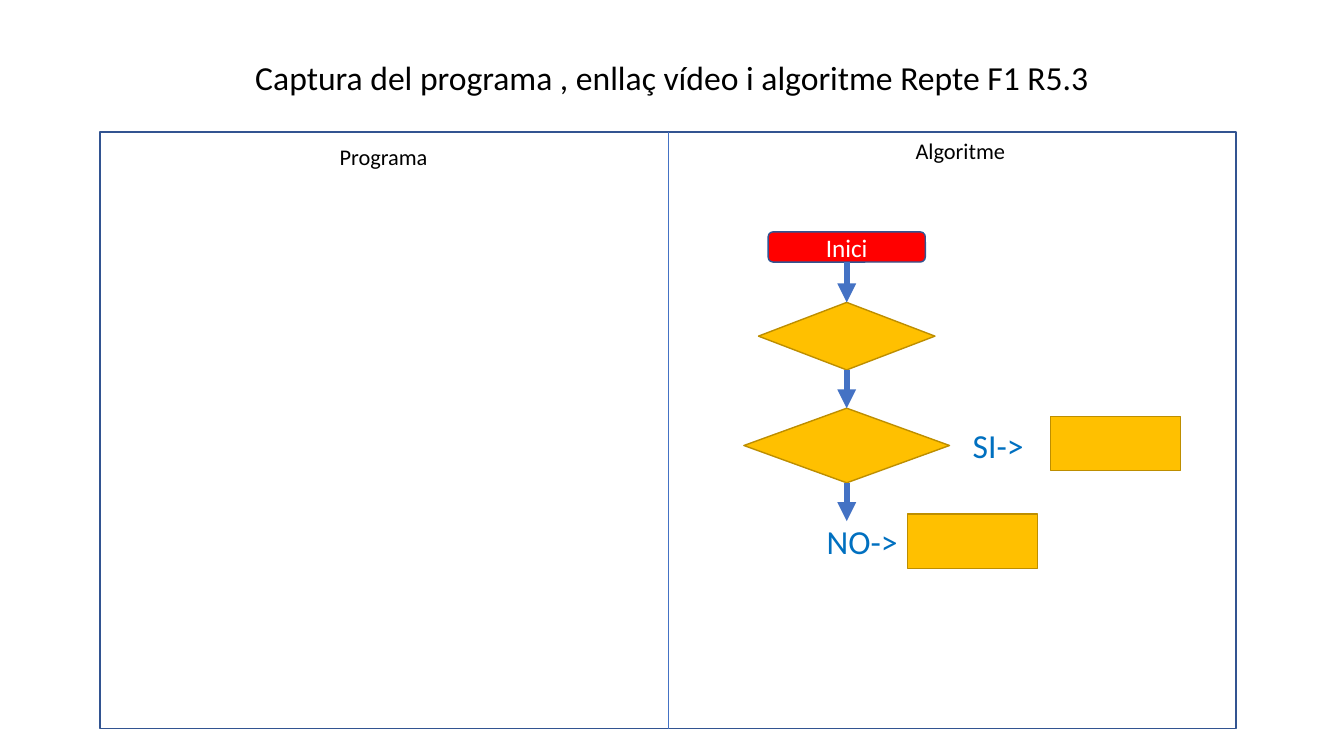
"""Builds the slide with a program panel and an algorithm flowchart."""
from lxml import etree
from pptx import Presentation, util as u
from pptx.dml.color import RGBColor
from pptx.enum import shapes, text
from pptx.oxml.ns import qn

THEME = {
    "font": "Calibri", "title": 24, "heading": 16, "start": 18, "branch": 24,
    "black": "000000", "white": "FFFFFF", "red": "FF0000", "navy": "325491",
    "amber": "FFC000", "ochre": "BD8E00", "blue": "4472C4", "azure": "0070C0",
}
FORM = shapes.MSO_SHAPE

presentation = Presentation()
presentation.slide_width = u.Inches(13.33)
presentation.slide_height = u.Inches(7.5)
slide = presentation.slides.add_slide(presentation.slide_layouts[6])
column = presentation.slide_width / 100
row = presentation.slide_height / 100


def add_box(form, left, top, width, height, fill, line):
    """Adds a filled preset shape, or a text box when form is None."""
    area = [round(length) for length in (left * column, top * row, width * column, height * row)]
    if form is None:
        return slide.shapes.add_textbox(*area)
    shape = slide.shapes.add_shape(form, *area)
    shape.shadow.inherit = False
    shape.fill.solid()
    shape.fill.fore_color.rgb = RGBColor.from_string(THEME[fill])
    shape.line.color.rgb = RGBColor.from_string(THEME[line])
    shape.line.width = u.Pt(1)
    return shape


def write(shape, wording, size, color, centered=True):
    """Writes one paragraph into a shape and returns it."""
    shape.text_frame.word_wrap = True
    paragraph = shape.text_frame.paragraphs[0]
    paragraph.text = wording
    paragraph.alignment = text.PP_ALIGN.CENTER if centered else text.PP_ALIGN.LEFT
    paragraph.font.name = THEME["font"]
    paragraph.font.size = u.Pt(THEME[size])
    paragraph.font.color.rgb = RGBColor.from_string(THEME[color])
    return paragraph


frame = add_box(FORM.RECTANGLE, 7.43, 17.47, 84.55, 78.93, "white", "navy")

for wording, size, left, top, width in (
    ("Programa", "heading", 7.43, 18.67, 42.23),
    ("Algoritme", "heading", 50.34, 17.87, 42.23),
    ("Captura del programa , enllaç vídeo i algoritme Repte F1 R5.3", "title", 0, 7.47, 100),
):
    heading = write(add_box(None, left, top, width, 24.13, None, None), wording, size, "black")
    heading.line_spacing = 0.9
    heading.space_before = u.Pt(10)

axis = 63
steps = []
for form, top, width, height, fill, line in (
    (FORM.ROUNDED_RECTANGLE, 30.67, 11.7, 4, "red", "navy"),
    (FORM.DIAMOND, 40, 13.13, 8.93, "amber", "ochre"),
    (FORM.DIAMOND, 54, 15.3, 9.87, "amber", "ochre"),
):
    steps.append(add_box(form, axis - width / 2, top, width, height, fill, line))
start, first_decision, second_decision = steps
write(start, "Inici", "start", "white")
start.text_frame.vertical_anchor = text.MSO_ANCHOR.MIDDLE

for wording, label_left, label_top, label_width, action_left, action_top in (
    ("SI->", 71.64, 55.6, 5.63, 78.17, 55.07),
    ("NO->", 60.77, 68.27, 7.5, 67.52, 68),
):
    label = add_box(None, label_left, label_top, label_width, 6.67, None, None)
    write(label, wording, "branch", "azure", centered=False)
    add_box(FORM.RECTANGLE, action_left, action_top, 9.68, 7.2, "amber", "ochre")

for source, source_side, target, width in (
    (frame, 0, frame, 0.5),
    (start, 2, first_decision, 4.5),
    (first_decision, 2, second_decision, 4.5),
    (second_decision, 2, None, 4.5),
):
    end = round(axis * column), round(68.93 * row)
    connector = slide.shapes.add_connector(shapes.MSO_CONNECTOR.STRAIGHT, *end, *end)
    connector.begin_connect(source, source_side)
    if target is not None:
        connector.end_connect(target, 2 if target is source else 0)
    connector.line.color.rgb = RGBColor.from_string(THEME["blue"])
    connector.line.width = u.Pt(width)
    if target is not source:
        etree.SubElement(connector.line._get_or_add_ln(), qn("a:tailEnd"), type="triangle")
    etree.SubElement(connector._element.spPr, qn("a:effectLst"))

presentation.save("out.pptx")
